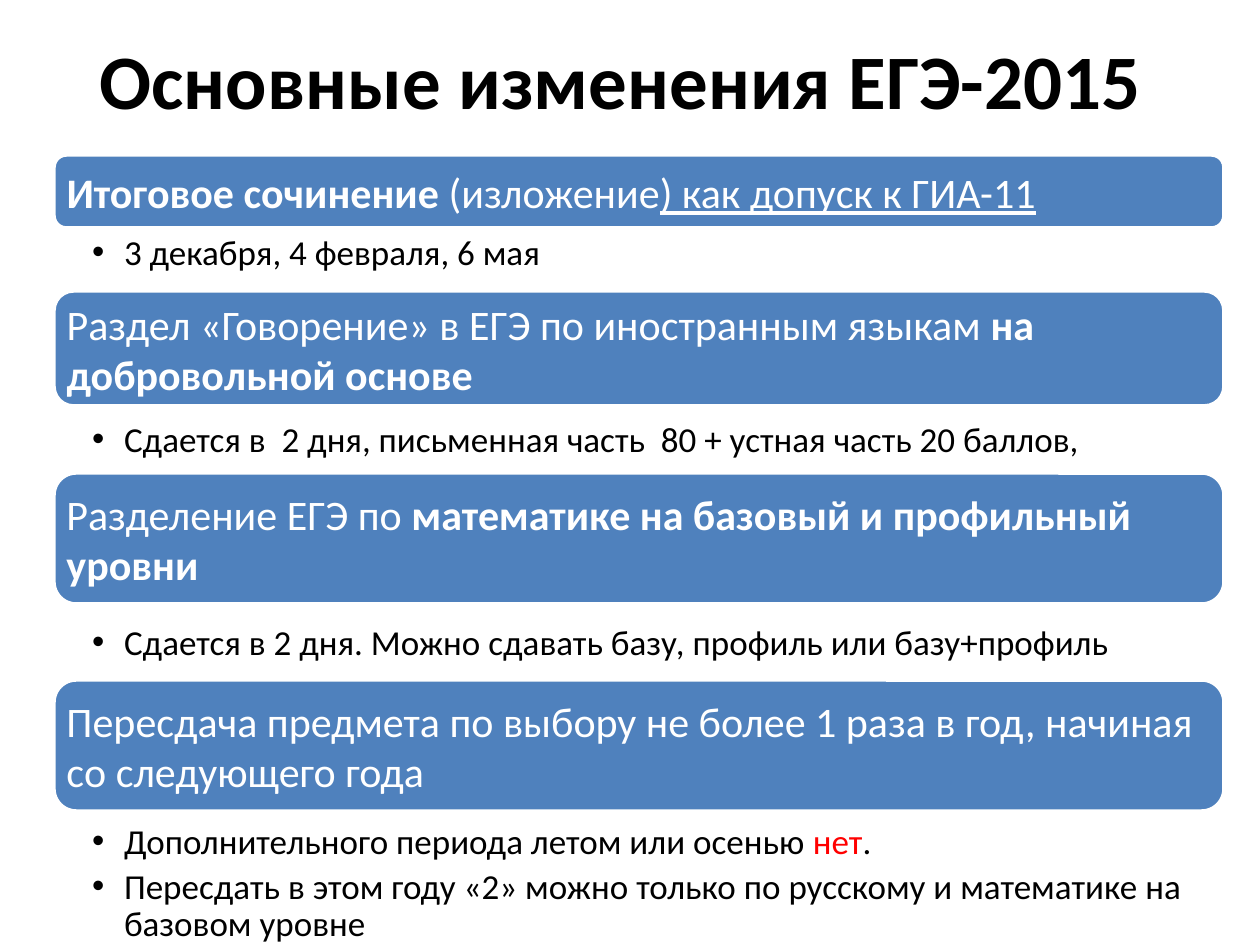
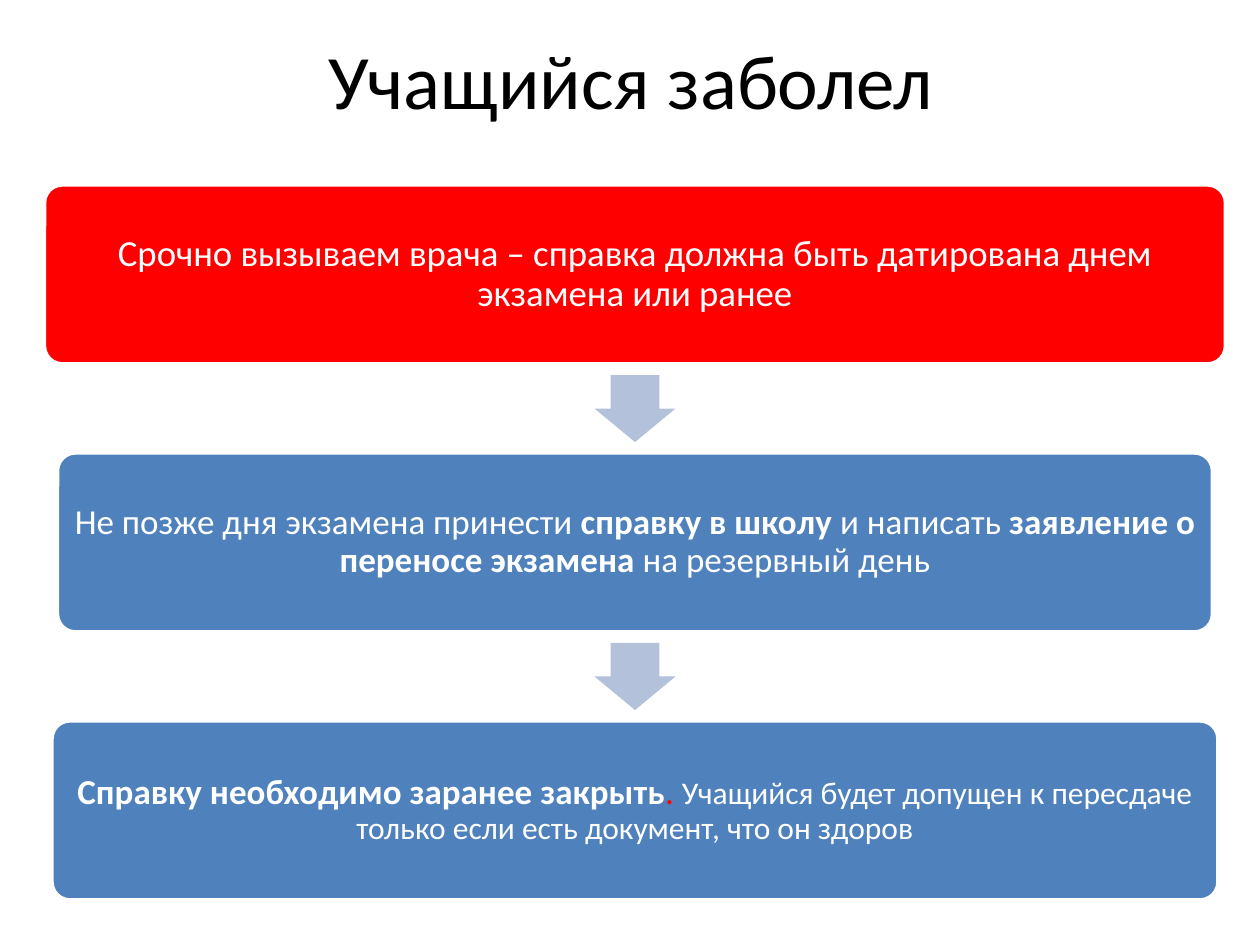
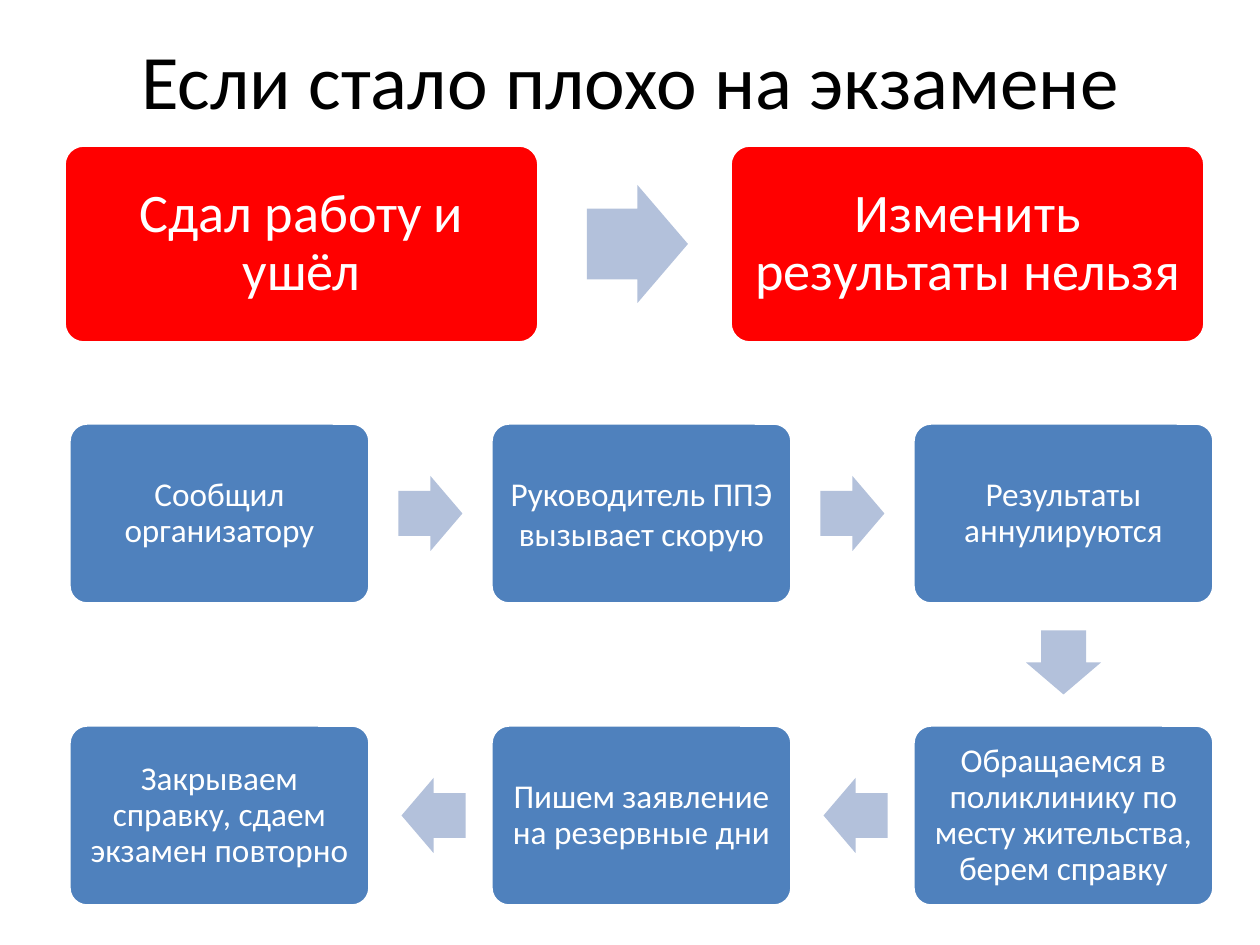
from lxml.etree import SubElement
from pptx import Presentation
from pptx.dml.color import RGBColor
from pptx.enum.shapes import MSO_SHAPE as Preset
from pptx.enum.text import MSO_ANCHOR as Anchor, MSO_AUTO_SIZE as AutoSize, PP_ALIGN as Align
from pptx.oxml.ns import qn
from pptx.util import Emu, Pt

FONT = "Calibri"
BLACK, WHITE, RED = "000000", "FFFFFF", "FF0000"
BLUE, PALE_BLUE = "4F81BD", "B3C1DB"
TITLE_ONLY, FOUR_BODIES = 5, 4
BOLD, PLAIN = {"bold": True}, {}


def px(length):
    return Emu(round(length * 914400 / 126))


def color(value):
    return RGBColor.from_string(value)


def place(shape, left, top, width, height):
    shape.left, shape.top = px(left), px(top)
    shape.width, shape.height = px(width), px(height)


def write(shape, paragraphs, size, ink=BLACK, align=Align.CENTER, anchor=Anchor.MIDDLE,
          insets=(13, 6, 13, 6), spacing=1.0, after=0, bold=False, bullet=False):
    frame = shape.text_frame
    frame.word_wrap = True
    frame.auto_size = AutoSize.NONE
    frame.vertical_anchor = anchor
    frame.margin_left, frame.margin_top, frame.margin_right, frame.margin_bottom = map(px, insets)
    for index, runs in enumerate(paragraphs):
        paragraph = frame.add_paragraph() if index else frame.paragraphs[0]
        paragraph.alignment = align
        paragraph.line_spacing = spacing
        paragraph.space_before, paragraph.space_after = Pt(0), Pt(after)
        if bullet:
            add_bullet(paragraph)
        for text, style in [(runs, PLAIN)] if isinstance(runs, str) else runs:
            run = paragraph.add_run()
            run.text = text
            run.font.name = FONT
            run.font.size = Pt(style.get("size", size))
            run.font.bold = style.get("bold", bold)
            run.font.underline = style.get("underline", False)
            run.font.color.rgb = color(style.get("ink", ink))


def add_bullet(paragraph):
    properties = paragraph._p.get_or_add_pPr()
    properties.set("marL", str(px(32)))
    properties.set("indent", str(-px(32)))
    SubElement(properties, qn("a:buFont")).set("typeface", "Arial")
    SubElement(properties, qn("a:buChar")).set("char", "•")


def add_titled_slide(presentation, title, layout=TITLE_ONLY, left=64, bold=False):
    slide = presentation.slides.add_slide(presentation.slide_layouts[layout])
    place(slide.shapes.title, left, 0, 1134, 158)
    write(slide.shapes.title, [title], 44, bold=bold)
    return slide


def add_preset(slide, preset, box, fill):
    shape = slide.shapes.add_shape(preset, *map(px, box))
    shape.shadow.inherit = False
    shape.fill.solid()
    shape.fill.fore_color.rgb = color(fill)
    return shape


def add_card(slide, box, runs, size, fill=BLUE, corner=0.1, inset=10, spacing=0.9, **text_format):
    card = add_preset(slide, Preset.ROUNDED_RECTANGLE, box, fill)
    card.adjustments[0] = corner
    card.line.color.rgb = color(WHITE)
    card.line.width = Pt(2)
    write(card, [runs], size, ink=WHITE, insets=(inset,) * 4, spacing=spacing, **text_format)


def add_arrow(slide, center_x, center_y, length, breadth, rotation=0):
    box = (center_x - length / 2, center_y - breadth / 2, length, breadth)
    arrow = add_preset(slide, Preset.RIGHT_ARROW, box, PALE_BLUE)
    arrow.adjustments[0], arrow.adjustments[1] = 0.6, 0.5
    arrow.line.fill.background()
    arrow.rotation = rotation


def add_topic(slide, left, width, band, body_placeholder, body):
    top, height, heading = band
    inset = 13 - round(height * 0.05)
    add_card(slide, (left, top, width, height), heading, 24, corner=0.17, inset=inset,
             spacing=1.0, align=Align.LEFT)
    body_top, body_height, items = body
    place(body_placeholder, left, body_top, width, body_height)
    write(body_placeholder, items, 20, align=Align.LEFT, anchor=Anchor.TOP,
          insets=(38, 4, 20, 4), spacing=0.9, after=4, bullet=True)


def build_changes(presentation):
    slide = add_titled_slide(presentation, "Основные изменения ЕГЭ-2015", FOUR_BODIES, 54, bold=True)
    topics = [
        ((155, 73, [("Итоговое сочинение ", BOLD), ("(изложение", PLAIN),
                    (") как допуск к ГИА-11", {"underline": True})]),
         (231, 54, ["3 декабря, 4 февраля, 6 мая"])),
        ((291, 115, [("Раздел «Говорение» в ЕГЭ по иностранным языкам ", PLAIN),
                     ("на добровольной основе", BOLD)]),
         (418, 54, ["Сдается в  2 дня, письменная часть  80 + устная часть 20 баллов,"])),
        ((473, 131, [("Разделение ЕГЭ по ", PLAIN),
                     ("математике на базовый и профильный уровни", BOLD)]),
         (621, 54, ["Сдается в 2 дня. Можно сдавать базу, профиль или базу+профиль"])),
        ((680, 131, "Пересдача предмета по выбору не более 1 раза в год, начиная со следующего года"),
         (820, 125, [[("Дополнительного периода летом или осенью ", PLAIN), ("нет", {"ink": RED}),
                      (".", PLAIN)],
                     "Пересдать в этом году «2» можно только по русскому и математике на базовом уровне"])),
    ]
    bodies = [holder for holder in slide.placeholders if holder.placeholder_format.idx]
    for (band, body), holder in zip(topics, bodies):
        add_topic(slide, 54, 1170, band, holder, body)


def add_vertical_steps(slide, center_x, top, height, gap, steps):
    for index, (width, fill, size, runs) in enumerate(steps):
        step_top = top + index * (height + gap)
        if index:
            add_arrow(slide, center_x, step_top - gap / 2, 67, 81, 90)
        add_card(slide, (center_x - width / 2, step_top, width, height), runs, size, fill)


def build_illness(presentation):
    slide = add_titled_slide(presentation, "Учащийся заболел")
    add_vertical_steps(slide, 635, 185, 179, 89, [
        (1181, RED, 21,
         "Срочно вызываем врача – справка должна быть датирована днем экзамена или ранее"),
        (1155, BLUE, 20,
         [("Не позже дня экзамена принести ", PLAIN), ("справку в школу ", BOLD),
          ("и написать ", PLAIN), ("заявление о переносе экзамена", BOLD),
          (" на резервный день", PLAIN)]),
        (1166, BLUE, 20,
         [("Справку необходимо заранее закрыть", BOLD), (". ", {"ink": RED}),
          ("Учащийся будет допущен к пересдаче только если есть документ, что он здоров",
           {"size": 18})]),
    ])


def add_outcome(slide, left, top, width, height, gap, texts):
    for index, text in enumerate(texts):
        box = (left + index * (width + gap), top, width, height)
        add_card(slide, box, text, 31, RED, inset=16)
    add_arrow(slide, left + width + gap / 2 + 3, top + height / 2, 101, 118)


def add_snake(slide, left, top, width, height, gap, rows):
    columns = len(rows[0])
    for row, texts in enumerate(rows):
        row_top = top + row * (height + gap)
        backward = row % 2
        for step, (text, spacing) in enumerate(texts):
            column = columns - 1 - step if backward else step
            card_left = left + column * (width + gap)
            add_card(slide, (card_left, row_top, width, height), text, 19, spacing=spacing)
            if step:
                arrow_x = card_left + width + gap / 2 + 3 if backward else card_left - gap / 2
                add_arrow(slide, arrow_x, row_top + height / 2, 64, 75, 180 * backward)
            elif row:
                add_arrow(slide, card_left + width / 2, row_top - gap / 2 - 2, 64, 75, 90)


def build_exam(presentation):
    slide = add_titled_slide(presentation, "Если стало плохо на экзамене")
    add_snake(slide, 69, 423, 301, 181, 121, [
        [("Сообщил организатору", 0.9), ("Руководитель ППЭ вызывает скорую", 1.0),
         ("Результаты аннулируются", 0.9)],
        [("Обращаемся в поликлинику по месту жительства, берем справку", 0.9),
         ("Пишем заявление на резервные дни", 0.9),
         ("Закрываем справку, сдаем экзамен повторно", 0.9)],
    ])
    add_outcome(slide, 64, 145, 475, 198, 191, ["Сдал работу и ушёл", "Изменить результаты нельзя"])


def main():
    presentation = Presentation()
    presentation.slide_width, presentation.slide_height = px(1260), px(945)
    build_changes(presentation)
    build_illness(presentation)
    build_exam(presentation)
    presentation.save("out.pptx")


if __name__ == "__main__":
    main()
